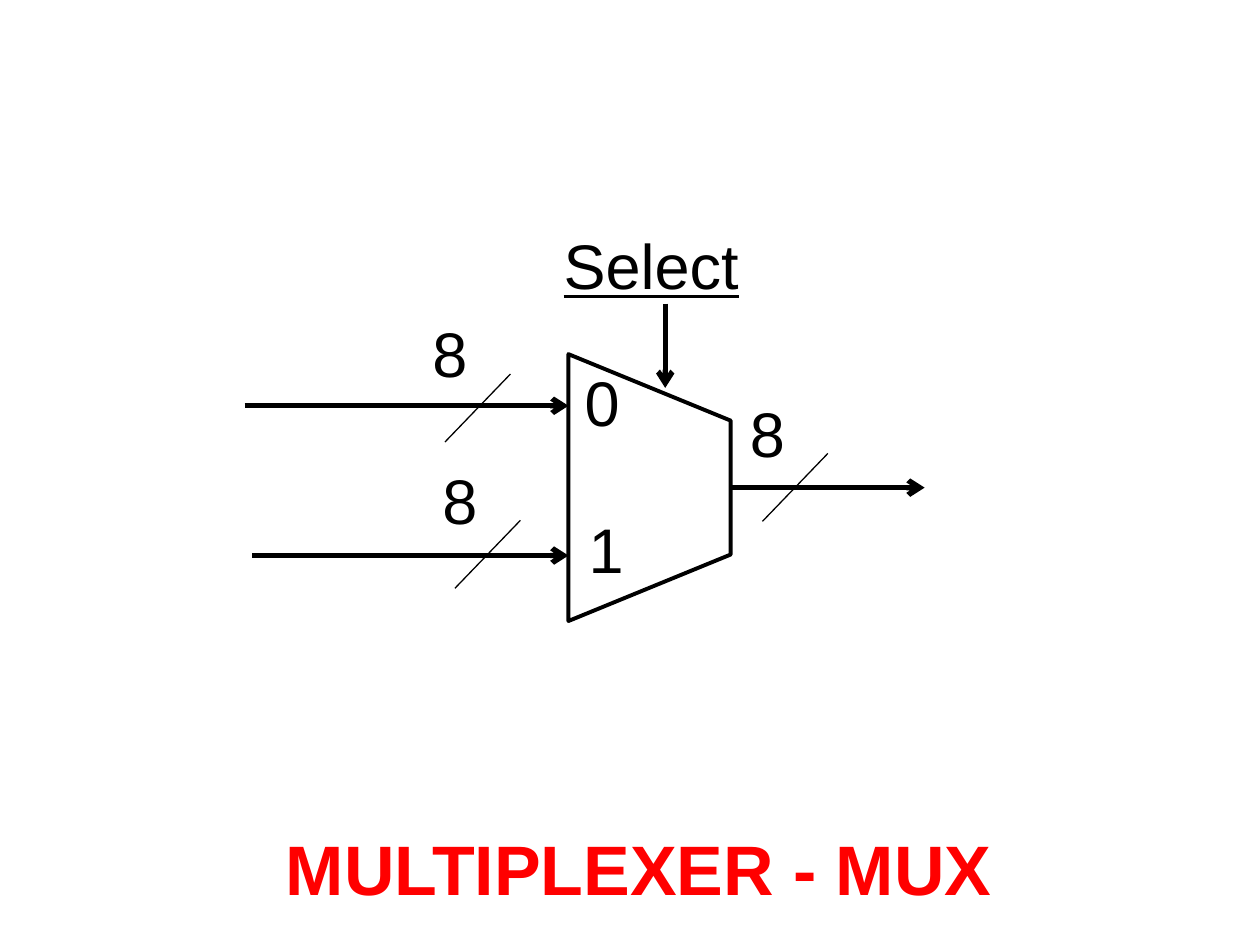
from dataclasses import dataclass

from lxml import etree
from pptx import Presentation
from pptx.dml.color import RGBColor
from pptx.enum.shapes import MSO_CONNECTOR
from pptx.enum.text import MSO_ANCHOR, PP_ALIGN
from pptx.oxml.ns import qn
from pptx.util import Cm, Pt

STRAIGHT = MSO_CONNECTOR.STRAIGHT
TOP = MSO_ANCHOR.TOP
LEFT, CENTER = PP_ALIGN.LEFT, PP_ALIGN.CENTER


@dataclass(frozen=True)
class Theme:
    font: str = "Arial"
    ink: RGBColor = RGBColor(0, 0, 0)
    red: RGBColor = RGBColor(255, 0, 0)
    head: Pt = Pt(40)
    label: Pt = Pt(36)
    wire: Pt = Pt(3)
    edge: Pt = Pt(2.25)
    thin: Pt = Pt(0.75)


theme = Theme()


def write(shape, text, size, color, align):
    """Fill a text shape with one styled run and return its font."""
    frame = shape.text_frame
    frame.word_wrap = False
    frame.vertical_anchor = TOP
    par = frame.paragraphs[0]
    par.alignment = align
    run = par.add_run()
    run.text = text
    font = run.font
    font.name, font.size = theme.font, size
    font.color.rgb = color
    return font


def draw_line(x1, y1, x2, y2, width, arrow=False):
    line = slide.shapes.add_connector(STRAIGHT, Cm(x1), Cm(y1), Cm(x2), Cm(y2))
    line.line.color.rgb = theme.ink
    line.line.width = width
    props = line.line._get_or_add_ln()
    if arrow:
        etree.SubElement(props, qn("a:tailEnd"), type="arrow")
    etree.SubElement(props.getparent(), qn("a:effectLst"))


deck = Presentation()
deck.slide_width, deck.slide_height = Cm(25.4), Cm(19.05)
slide = deck.slides.add_slide(deck.slide_layouts[5])

# Title below the diagram
title = slide.shapes.title
title.left, title.top = Cm(5.51), Cm(16.51)
title.width, title.height = Cm(14.88), Cm(1.96)
write(title, "MULTIPLEXER - MUX", theme.head, theme.red, LEFT).bold = True

# Multiplexer body
left, right, mid = 11.46, 14.73, 9.83
tall, short = 2.69, 1.35
start, *rest = [
    (Cm(x), Cm(y))
    for x, y in [
        (left, mid + tall),
        (right, mid + short),
        (right, mid - short),
        (left, mid - tall),
    ]
]
path = slide.shapes.build_freeform(*start)
path.add_line_segments(rest, close=True)
mux = path.convert_to_shape()
mux.shadow.inherit = False
mux.fill.background()
mux.line.color.rgb = theme.ink
mux.line.width = theme.edge

# Inputs, output and select signal
wires = [
    (4.93, 8.18, left, 8.18),
    (5.08, 11.2, left, 11.2),
    (right, mid, 18.64, mid),
    (13.41, 6.12, 13.41, 7.82),
]
for ends in wires:
    draw_line(*ends, theme.wire, arrow=True)

# Each bus has a slash with its width written above
labels = [("0", 11.53, 7.21, 1.22), ("1", 11.61, 10.16, 1.22),
          ("Select", 11.1, 4.45, 4.06)]
for x, y in [(8.97, 7.54), (9.17, 10.49), (15.37, 9.14)]:
    draw_line(x + 1.32, y, x, y + 1.37, theme.thin)
    labels.append(("8", x - 0.51, y - 1.32, 1.22))

for text, x, y, width in labels:
    box = slide.shapes.add_textbox(Cm(x), Cm(y), Cm(width), Cm(1.8))
    font = write(box, text, theme.label, theme.ink, CENTER)
    if text == "Select":
        font.underline = True

deck.save("out.pptx")
